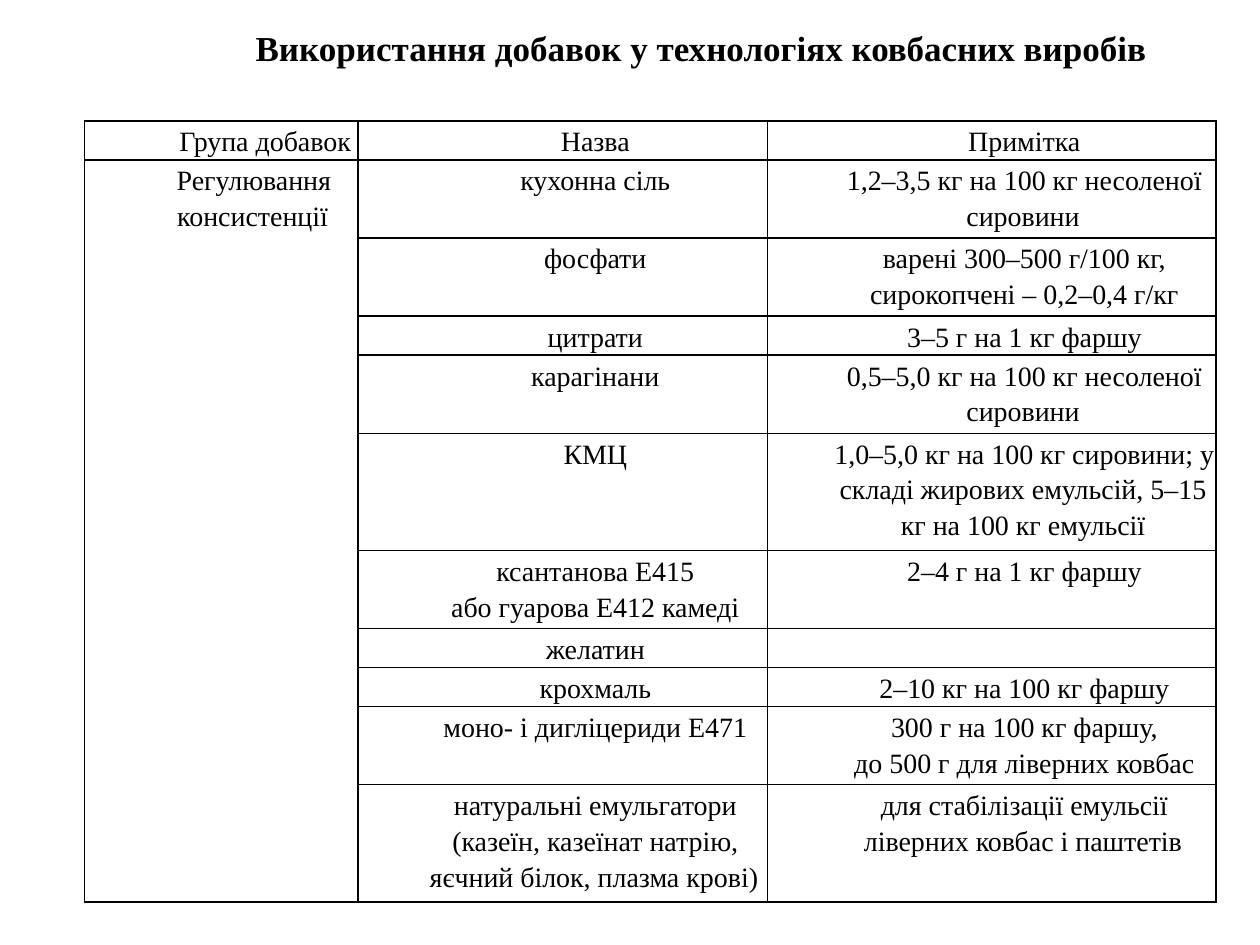
from dataclasses import dataclass

from lxml.etree import SubElement
from pptx import Presentation
from pptx.dml.color import RGBColor
from pptx.enum.text import MSO_ANCHOR, MSO_AUTO_SIZE, PP_ALIGN
from pptx.oxml.ns import qn
from pptx.util import Inches, Pt

COLORS = {"ink": "000000", "paper": "FFFFFF"}
FONT = "Times New Roman"
BODY_SIZE = Pt(16)
LINE_HEIGHT = 0.31
COLUMN_WIDTHS = (2.17, 3.25, 3.56)
TITLE = "Використання добавок у технологіях ковбасних виробів"
HEADINGS = ("Група добавок", "Назва", "Примітка")
GROUP = "Регулювання консистенції"


@dataclass(frozen=True)
class Additive:
    name: str
    note: str
    lines: int


ADDITIVES = (
    Additive("кухонна сіль", "1,2–3,5 кг на 100 кг несоленої сировини", 2),
    Additive("фосфати", "варені 300–500 г/100 кг,\nсирокопчені – 0,2–0,4 г/кг", 2),
    Additive("цитрати", "3–5 г на 1 кг фаршу", 1),
    Additive("карагінани", "0,5–5,0 кг на 100 кг несоленої сировини", 2),
    Additive("КМЦ", "1,0–5,0 кг на 100 кг сировини; у складі жирових емульсій, "
             "5–15 кг на 100 кг емульсії", 3),
    Additive("ксантанова Е415\nабо гуарова Е412 камеді", "2–4 г на 1 кг фаршу", 2),
    Additive("желатин", "", 1),
    Additive("крохмаль", "2–10 кг на 100 кг фаршу", 1),
    Additive("моно- і дигліцериди Е471",
             "300 г на 100 кг фаршу,\nдо 500 г для ліверних ковбас", 2),
    Additive("натуральні емульгатори\n(казеїн, казеїнат натрію, яєчний білок, плазма крові)",
             "для стабілізації емульсії ліверних ковбас і паштетів", 3),
)


def rgb(name: str) -> RGBColor:
    return RGBColor.from_string(COLORS[name])


def set_indent(paragraph, left: float, first_line: float) -> None:
    properties = paragraph._p.get_or_add_pPr()
    properties.set("marL", str(Inches(left)))
    properties.set("indent", str(Inches(first_line)))


def add_text(paragraph, text: str, size: Pt, bold: bool = False) -> None:
    run = paragraph.add_run()
    run.text = text
    run.font.name = FONT
    run.font.size = size
    run.font.bold = bold
    run.font.color.rgb = rgb("ink")


def add_borders(cell) -> None:
    """Draw the four cell edges; they must precede the fill in tcPr."""
    properties = cell._tc.get_or_add_tcPr()
    for side in ("lnL", "lnR", "lnT", "lnB"):
        line = SubElement(properties, qn(f"a:{side}"), w=str(Pt(1)))
        fill = SubElement(line, qn("a:solidFill"))
        SubElement(fill, qn("a:srgbClr"), val=COLORS["ink"])


def style_cell(cell) -> None:
    add_borders(cell)
    cell.fill.solid()
    cell.fill.fore_color.rgb = rgb("paper")
    cell.margin_left = cell.margin_right = cell.margin_top = Inches(0.01)
    cell.margin_bottom = 0


def fill_cell(cell, text: str, first_line: float = 0.02) -> None:
    frame = cell.text_frame
    for index, part in enumerate(text.split("\n")):
        paragraph = frame.add_paragraph() if index else frame.paragraphs[0]
        paragraph.alignment = PP_ALIGN.CENTER
        paragraph.line_spacing = 1.15
        set_indent(paragraph, 0.5, first_line)
        if part:
            add_text(paragraph, part, BODY_SIZE)
        else:
            # An empty line takes its height from the end-of-paragraph size.
            SubElement(paragraph._p, qn("a:endParaRPr"), sz=str(int(BODY_SIZE.pt * 100)))


def add_title(slide) -> None:
    title = slide.shapes.add_textbox(Inches(1.44), Inches(0.16), Inches(7.82), Inches(0.44))
    frame = title.text_frame
    frame.word_wrap = False
    frame.auto_size = MSO_AUTO_SIZE.SHAPE_TO_FIT_TEXT
    frame.vertical_anchor = MSO_ANCHOR.MIDDLE
    paragraph = frame.paragraphs[0]
    paragraph.alignment = PP_ALIGN.JUSTIFY
    set_indent(paragraph, 0, 0.49)
    add_text(paragraph, TITLE, Pt(20), bold=True)


def add_additives_table(slide) -> None:
    line_counts = [1] + [additive.lines for additive in ADDITIVES]
    table = slide.shapes.add_table(
        len(line_counts), len(COLUMN_WIDTHS), Inches(0.67), Inches(0.96),
        Inches(sum(COLUMN_WIDTHS)), Inches(LINE_HEIGHT * sum(line_counts))).table
    table.first_row = table.horz_banding = False
    for column, width in zip(table.columns, COLUMN_WIDTHS):
        column.width = Inches(width)
    for row, lines in zip(table.rows, line_counts):
        row.height = Inches(LINE_HEIGHT * lines)
    for cell in table.iter_cells():
        style_cell(cell)

    for column, heading in enumerate(HEADINGS):
        fill_cell(table.cell(0, column), heading, 0.02 if column else 0.2)
    table.cell(1, 0).merge(table.cell(len(ADDITIVES), 0))
    fill_cell(table.cell(1, 0), GROUP)
    for row, additive in enumerate(ADDITIVES, start=1):
        fill_cell(table.cell(row, 1), additive.name)
        fill_cell(table.cell(row, 2), additive.note)


def main() -> None:
    presentation = Presentation()
    presentation.slide_width = Inches(10)
    presentation.slide_height = Inches(7.5)
    slide = presentation.slides.add_slide(presentation.slide_layouts[6])
    add_additives_table(slide)
    add_title(slide)
    presentation.save("out.pptx")


if __name__ == "__main__":
    main()
